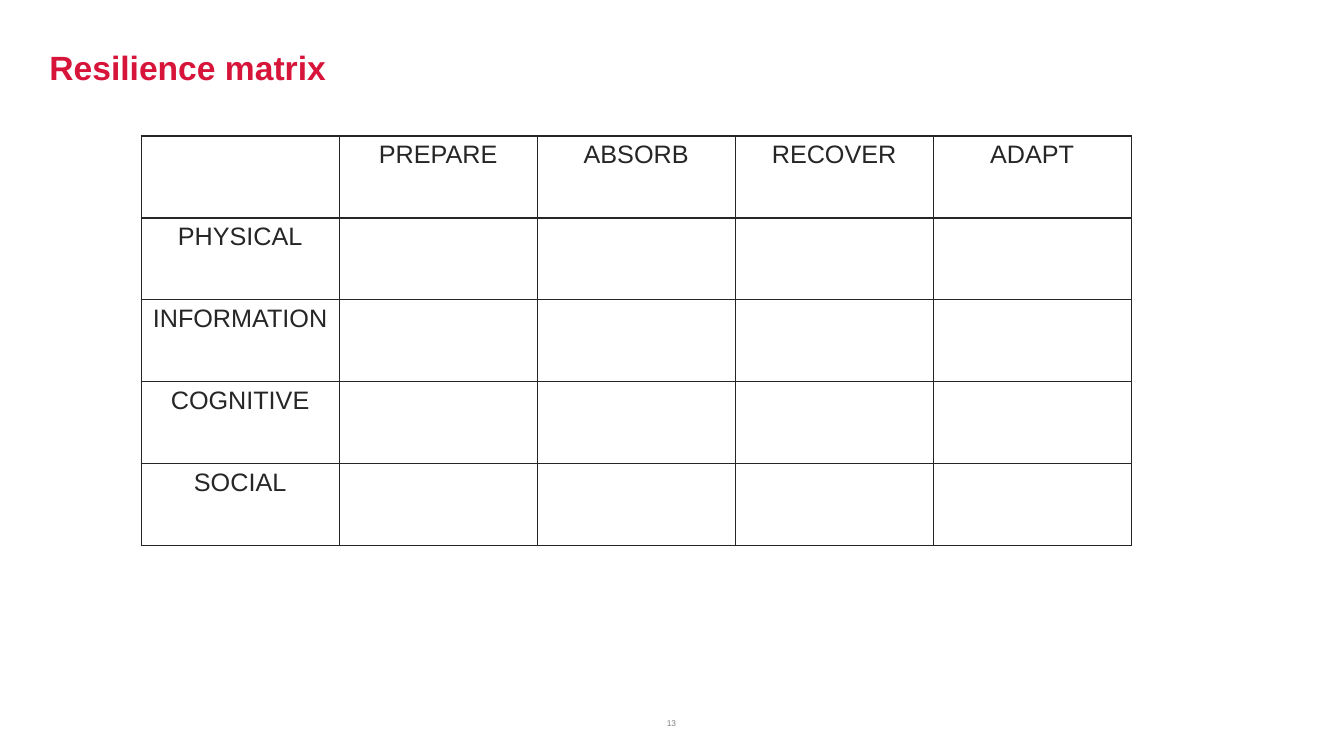
from lxml.etree import SubElement
from pptx import Presentation
from pptx.dml.color import RGBColor
from pptx.enum.text import MSO_ANCHOR, PP_ALIGN
from pptx.oxml.ns import qn
from pptx.util import Inches, Pt

RED = RGBColor(0xD7, 0x15, 0x3A)
INK = RGBColor(0x26, 0x26, 0x26)
GREY = RGBColor(0x7F, 0x7F, 0x7F)
FONT = "Arial"
TITLE_ONLY = 5

STAGES = ["PREPARE", "ABSORB", "RECOVER", "ADAPT"]
DOMAINS = ["PHYSICAL", "INFORMATION", "COGNITIVE", "SOCIAL"]


def format_paragraph(paragraph, size, color, alignment, bold=False):
    paragraph.alignment = alignment
    font = paragraph.font
    font.name, font.size, font.bold = FONT, Pt(size), bold
    font.color.rgb = color


def fill_frame(frame, text, anchor):
    """Put text in a frame without insets and return its paragraph."""
    frame.text = text
    frame.word_wrap = True
    frame.vertical_anchor = anchor
    frame.margin_left = frame.margin_right = 0
    frame.margin_top = frame.margin_bottom = 0
    return frame.paragraphs[0]


def add_title(slide, text):
    title = slide.shapes.title
    title.left, title.top = Inches(0.49), Inches(0.4)
    title.width, title.height = Inches(12.36), Inches(0.59)
    paragraph = fill_frame(title.text_frame, text, MSO_ANCHOR.MIDDLE)
    paragraph.line_spacing = 0.9
    format_paragraph(paragraph, 24, RED, PP_ALIGN.LEFT, bold=True)


def add_page_number(slide, number):
    box = slide.shapes.add_textbox(Inches(5.74), Inches(6.92), Inches(1.84), Inches(0.3))
    paragraph = fill_frame(box.text_frame, str(number), MSO_ANCHOR.BOTTOM)
    format_paragraph(paragraph, 6, GREY, PP_ALIGN.CENTER)


def add_borders(cell, color, width):
    properties = cell._tc.get_or_add_tcPr()
    for side in ("lnL", "lnR", "lnT", "lnB"):
        line = SubElement(properties, qn(f"a:{side}"), w=str(Pt(width)))
        solid = SubElement(line, qn("a:solidFill"))
        SubElement(solid, qn("a:srgbClr"), val=str(color))


def add_matrix(slide, column_heads, row_heads):
    """Add an empty grid with headings along its top and left edges."""
    table = slide.shapes.add_table(
        len(row_heads) + 1, len(column_heads) + 1,
        Inches(1.4), Inches(1.35), Inches(9.82), Inches(4.06),
    ).table
    table.first_row = table.horz_banding = False
    for column, head in enumerate(column_heads, 1):
        table.cell(0, column).text = head
    for row, head in enumerate(row_heads, 1):
        table.cell(row, 0).text = head
    for cell in table.iter_cells():
        add_borders(cell, INK, 1)
        cell.fill.background()
        format_paragraph(cell.text_frame.paragraphs[0], 18, INK, PP_ALIGN.CENTER)


def main():
    presentation = Presentation()
    presentation.slide_width = Inches(13.33)
    presentation.slide_height = Inches(7.5)
    slide = presentation.slides.add_slide(presentation.slide_layouts[TITLE_ONLY])
    add_page_number(slide, 13)
    add_title(slide, "Resilience matrix")
    add_matrix(slide, STAGES, DOMAINS)
    presentation.save("out.pptx")


if __name__ == "__main__":
    main()
